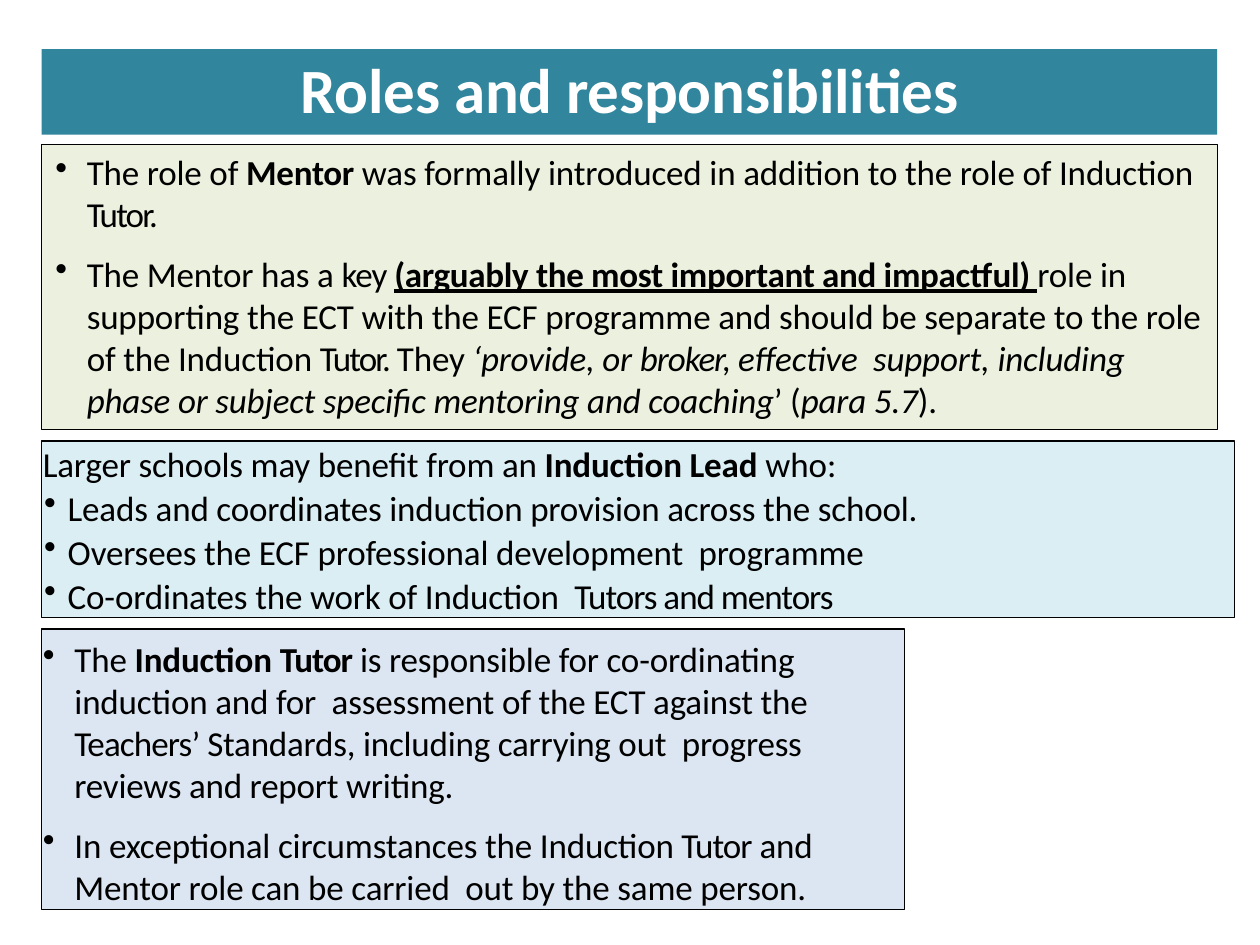
from lxml.etree import SubElement
from pptx import Presentation
from pptx.dml.color import RGBColor
from pptx.enum.shapes import MSO_SHAPE as Shape
from pptx.enum.text import MSO_ANCHOR as Anchor, PP_ALIGN as Align
from pptx.oxml.ns import qn
from pptx.util import Pt

COLORS = {"teal": "31859C", "green": "EBF1DE", "aqua": "DBEEF4",
          "blue": "DCE6F2", "black": "000000", "white": "FFFFFF"}
FONT = "Calibri"
BODY_SIZE = 20
LEFT = 23.8
INDENT = (18.7, 18)       # text margin, hanging part
SHORT_INDENT = (14.2, 13.5)

# A run is (text, style letters, letter spacing in points); b, i, u as usual.
TITLE = [("Roles and responsibilities", "b", -0.1)]
MENTOR = [
    [("The role of ", "", -0.1), ("Mentor ", "b", -0.2),
     ("was formally introduced in addition to the role of Induction ", "", -0.1),
     ("Tutor.", "", -1.1)],
    [("The Mentor has a ", "", -0.1), ("key ", "", -0.6),
     ("(arguably the most important and impactful) ", "bu", -0.2),
     ("role in supporting the ECT with the ECF programme and should be "
      "separate to the role of the Induction ", "", -0.1),
     ("Tutor. ", "", -1.1), ("They ", "", -0.1), ("‘provide, or ", "i", -0.1),
     ("broker, ", "i", -0.6),
     ("effective  support, including phase or subject specific mentoring "
      "and coaching", "i", -0.1),
     ("’ (", "", -0.1), ("para 5.7", "i", -0.1), (").", "", -0.1)],
]
LEAD = [
    [("Larger schools may benefit from an ", "", -0.1),
     ("Induction Lead ", "b", -0.1), ("who:", "", 0)],
    [("Leads and coordinates induction provision across the school.", "", -0.1)],
    [("Oversees the ECF professional development  programme", "", -0.1)],
    [("Co-ordinates the work of Induction  ", "", -0.1),
     ("Tutors and mentors", "", -0.6)],
]
TUTOR = [
    [("The ", "", -0.1), ("Induction ", "b", -0.1), ("Tutor ", "b", -0.6),
     ("is responsible for co-ordinating induction and for  assessment of the "
      "ECT against the ", "", -0.1),
     ("Teachers’ ", "", -0.5),
     ("Standards, including carrying out  progress reviews and report "
      "writing.", "", -0.15)],
    [("In exceptional circumstances the Induction ", "", -0.1),
     ("Tutor ", "", -0.6),
     ("and Mentor role can be carried  out by the same person.", "", -0.1)],
]

PANELS = [
    dict(paragraphs=MENTOR, fill="green", top=82.6, width=671.8, height=162.9,
         insets=(7.2, 3.6, 7.2, 3.6), gap=10.2),
    dict(paragraphs=LEAD, fill="aqua", top=252, width=681.8, height=100.9,
         insets=(0.7, 0.7, 0, 0), gap=1.1, indent=SHORT_INDENT, lead_in=True),
    dict(paragraphs=TUTOR, fill="blue", top=359.4, width=493.2, height=160.4,
         insets=(0, 5, 0, 0), gap=10),
]


def color(name):
    return RGBColor.from_string(COLORS[name])


def add_band(slide, fill, top, width, height, outlined=True):
    band = slide.shapes.add_shape(Shape.RECTANGLE, Pt(LEFT), Pt(top),
                                  Pt(width), Pt(height))
    band.shadow.inherit = False
    band.fill.solid()
    band.fill.fore_color.rgb = color(fill)
    if outlined:
        band.line.color.rgb = color("black")
        band.line.width = Pt(0.75)
    else:
        band.line.fill.background()
    return band


def add_bullet(paragraph, margin, hanging):
    properties = paragraph._p.get_or_add_pPr()
    properties.set("marL", str(Pt(margin)))
    properties.set("indent", str(-Pt(hanging)))
    SubElement(properties, qn("a:buChar")).set("char", "•")


def write_text(band, paragraphs, size=BODY_SIZE, ink="black", align=Align.LEFT,
               insets=(0, 0, 0, 0), gap=0, indent=None, lead_in=False):
    """Fill a band; lead_in leaves the first paragraph without a bullet."""
    frame = band.text_frame
    frame.word_wrap = True
    frame.vertical_anchor = Anchor.TOP
    (frame.margin_left, frame.margin_top,
     frame.margin_right, frame.margin_bottom) = map(Pt, insets)
    for number, runs in enumerate(paragraphs):
        paragraph = frame.add_paragraph() if number else frame.paragraphs[0]
        paragraph.alignment = align
        if number:
            paragraph.space_before = Pt(gap)
        if indent and not (lead_in and number == 0):
            add_bullet(paragraph, *indent)
        for text, style, spacing in runs:
            run = paragraph.add_run()
            run.text = text
            font = run.font
            font.name, font.size = FONT, Pt(size)
            font.color.rgb = color(ink)
            font.bold, font.italic = "b" in style, "i" in style
            font.underline = "u" in style
            run._r.get_or_add_rPr().set("spc", str(round(spacing * 100)))


def main():
    deck = Presentation()
    deck.slide_width, deck.slide_height = Pt(720), Pt(540)
    slide = deck.slides.add_slide(deck.slide_layouts[6])

    heading = add_band(slide, "teal", 28.1, 671.8, 48.9, outlined=False)
    write_text(heading, [TITLE], size=36, ink="white", align=Align.CENTER,
               insets=(0, 0.7, 0, 0))
    for panel in PANELS:
        band = add_band(slide, panel["fill"], panel["top"], panel["width"],
                        panel["height"])
        write_text(band, panel["paragraphs"], insets=panel["insets"],
                   gap=panel["gap"], indent=panel.get("indent", INDENT),
                   lead_in=panel.get("lead_in", False))
    deck.save("out.pptx")


if __name__ == "__main__":
    main()
